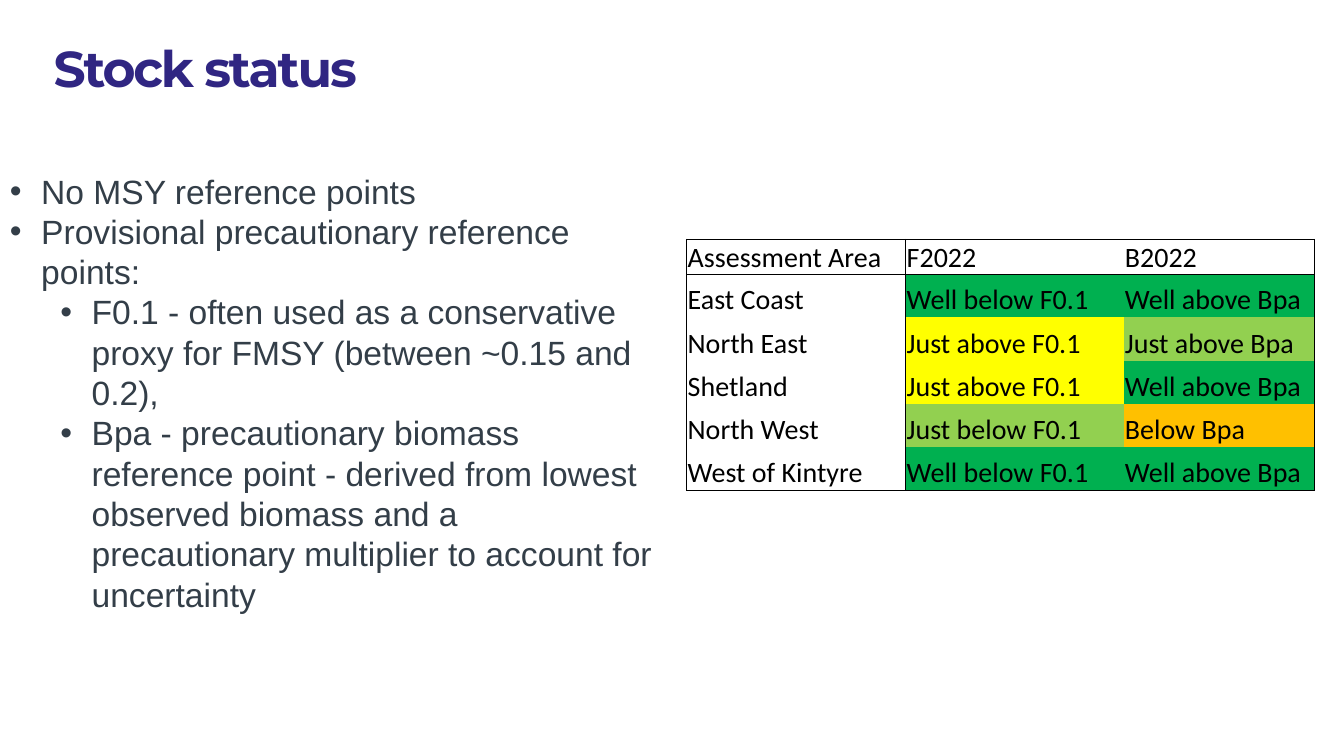
from lxml import etree
from pptx import Presentation
from pptx.dml.color import RGBColor
from pptx.enum.text import MSO_ANCHOR
from pptx.oxml.ns import qn
from pptx.util import Cm, Pt

BOTTOM = MSO_ANCHOR.BOTTOM
INDIGO = RGBColor(0x30, 0x26, 0x82)
SLATE = RGBColor(0x33, 0x3E, 0x48)
BLACK = RGBColor(0, 0, 0)
GREEN = RGBColor(0x00, 0xB0, 0x50)
LIME = RGBColor(0x92, 0xD0, 0x50)
YELLOW = RGBColor(0xFF, 0xFF, 0x00)
AMBER = RGBColor(0xFF, 0xC0, 0x00)

BULLETS = [
    (0, "No MSY reference points"),
    (0, "Provisional precautionary reference points:"),
    (1, "F0.1 - often used as a conservative proxy for FMSY (between ~0.15 and 0.2),"),
    (1, "Bpa - precautionary biomass reference point - derived from lowest observed "
        "biomass and a precautionary multiplier to account for uncertainty"),
]
STATUS = [
    ("Assessment Area", "F2022", "B2022"),
    ("East Coast", "Well below F0.1", "Well above Bpa"),
    ("North East", "Just above F0.1", "Just above Bpa"),
    ("Shetland", "Just above F0.1", "Well above Bpa"),
    ("North West", "Just below F0.1", "Below Bpa"),
    ("West of Kintyre", "Well below F0.1", "Well above Bpa"),
]
STATUS_FILL = {
    "Well below F0.1": GREEN, "Just below F0.1": LIME, "Just above F0.1": YELLOW,
    "Well above Bpa": GREEN, "Just above Bpa": LIME, "Below Bpa": AMBER,
}


class StockSlide:
    """Holds the text styles and the slide, and adds each kind of element."""

    TITLE = {"name": "Montserrat", "size": Pt(36), "bold": True}
    BODY = {"name": "Arial", "size": Pt(24), "bold": False}
    CELL = {"name": "Calibri", "size": Pt(20), "bold": False}

    def __init__(self, prs):
        self.s = prs.slides.add_slide(prs.slide_layouts[6])

    def add_text(self, p, text, style, color):
        r = p.add_run()
        r.text = text
        for key, value in style.items():
            setattr(r.font, key, value)
        r.font.color.rgb = color
        return r

    def text_frame(self, *box):
        tf = self.s.shapes.add_textbox(*map(Cm, box)).text_frame
        tf.word_wrap = True
        return tf

    def title(self, text, *box):
        tf = self.text_frame(*box)
        for side in ("left", "top", "right", "bottom"):
            setattr(tf, f"margin_{side}", 0)
        p = tf.paragraphs[0]
        p.line_spacing = 0.9
        r = self.add_text(p, text, self.TITLE, INDIGO)
        r._r.get_or_add_rPr().set("spc", "-150")

    def bullets(self, items, *box):
        tf = self.text_frame(*box)
        for i, (level, text) in enumerate(items):
            p = tf.add_paragraph() if i else tf.paragraphs[0]
            p.level = level
            pPr = p._p.get_or_add_pPr()
            pPr.set("marL", str(Cm(0.79 + 1.27 * level)))
            pPr.set("indent", str(Cm(-0.79)))
            etree.SubElement(pPr, qn("a:buFont"), typeface="Arial")
            etree.SubElement(pPr, qn("a:buChar"), char="•")
            self.add_text(p, text, self.BODY, SLATE)

    def borders(self, cell, shown):
        tcPr = cell._tc.get_or_add_tcPr()
        for side in "LRTB":
            ln = etree.SubElement(tcPr, qn(f"a:ln{side}"), w=str(Pt(0.5)))
            if side in shown:
                fill = etree.SubElement(ln, qn("a:solidFill"))
                etree.SubElement(fill, qn("a:srgbClr"), val=str(BLACK))
            else:
                etree.SubElement(ln, qn("a:noFill"))

    def table(self, rows, left, top, widths, heights):
        table = self.s.shapes.add_table(
            len(rows), len(widths), Cm(left), Cm(top),
            Cm(sum(widths)), Cm(sum(heights))).table
        table.first_row = table.horz_banding = False
        for col, width in zip(table.columns, widths):
            col.width = Cm(width)
        last_row, last_col = len(rows) - 1, len(widths) - 1
        for i, (row, height) in enumerate(zip(rows, heights)):
            table.rows[i].height = Cm(height)
            for j, text in enumerate(row):
                cell = table.cell(i, j)
                edges = {"L": j <= 1, "R": j in (0, last_col),
                         "T": i <= 1, "B": i in (0, last_row)}
                self.borders(cell, [side for side, on in edges.items() if on])
                if text in STATUS_FILL:
                    cell.fill.solid()
                    cell.fill.fore_color.rgb = STATUS_FILL[text]
                else:
                    cell.fill.background()
                cell.vertical_anchor = BOTTOM
                cell.margin_left = cell.margin_right = cell.margin_top = Cm(0.03)
                cell.margin_bottom = 0
                self.add_text(cell.text_frame.paragraphs[0], text, self.CELL, BLACK)


def main():
    prs = Presentation()
    prs.slide_width, prs.slide_height = Cm(33.87), Cm(19.05)
    slide = StockSlide(prs)
    slide.title("Stock status", 1.35, 1.12, 27.15, 2)
    slide.bullets(BULLETS, 0, 4.17, 16.71, 14.65)
    slide.table(STATUS, 17.3, 6.03, [5.52, 5.5, 4.8], [0.88] + [1.09] * 5)
    prs.save("out.pptx")


if __name__ == "__main__":
    main()
